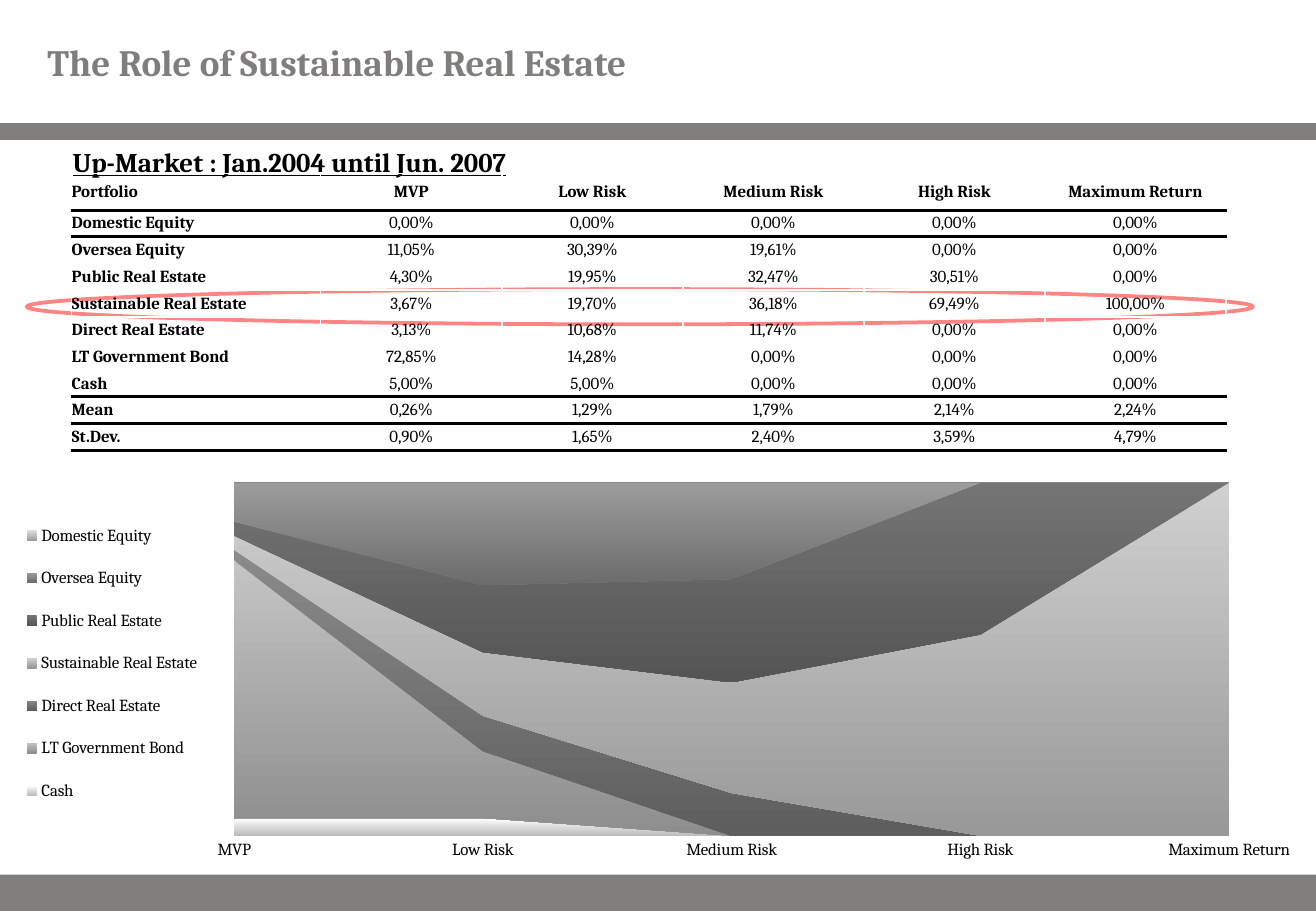
from dataclasses import dataclass

from pptx import Presentation
from pptx.chart.data import CategoryChartData
from pptx.dml.color import RGBColor
from pptx.enum.chart import XL_CHART_TYPE as CT, XL_LEGEND_POSITION as LP, XL_TICK_MARK as TM
from pptx.enum.shapes import MSO_CONNECTOR as CONN, MSO_SHAPE as SHAPE
from pptx.enum.text import MSO_ANCHOR as ANCHOR, PP_ALIGN as ALIGN
from pptx.oxml import parse_xml
from pptx.oxml.ns import nsdecls, qn
from pptx.util import Inches, Pt


@dataclass(frozen=True)
class Theme:
    font: str = "Cambria"
    title: int = 22
    heading: int = 16
    body: int = 10
    ink: str = "000000"
    gray: str = "7F7E7D"
    mark: str = "FF0000"


LEVELS = ["MVP", "Low Risk", "Medium Risk", "High Risk", "Maximum Return"]
TABLE = [
    ["Portfolio", *LEVELS],
    ["Domestic Equity", "0,00%", "0,00%", "0,00%", "0,00%", "0,00%"],
    ["Oversea Equity", "11,05%", "30,39%", "19,61%", "0,00%", "0,00%"],
    ["Public Real Estate", "4,30%", "19,95%", "32,47%", "30,51%", "0,00%"],
    ["Sustainable Real Estate", "3,67%", "19,70%", "36,18%", "69,49%", "100,00%"],
    ["Direct Real Estate", "3,13%", "10,68%", "11,74%", "0,00%", "0,00%"],
    ["LT Government Bond", "72,85%", "14,28%", "0,00%", "0,00%", "0,00%"],
    ["Cash", "5,00%", "5,00%", "0,00%", "0,00%", "0,00%"],
    ["Mean", "0,26%", "1,29%", "1,79%", "2,14%", "2,24%"],
    ["St.Dev.", "0,90%", "1,65%", "2,40%", "3,59%", "4,79%"],
]
RULED_ROWS = (0, 7, 9)  # rows with a rule below them
# name, values, gradient from top to bottom
SERIES = [
    ("Cash", (5, 5, 0, 0, 0), ("FFFFFF", "BBBBBB")),
    ("LT Government Bond", (73, 19, 0, 0, 0), ("C4C4C4", "8E8E8E")),
    ("Direct Real Estate", (3, 10, 12, 0, 0), ("8A8A8A", "5E5E5E")),
    ("Sustainable Real Estate", (4, 18, 31, 57, 100), ("D0D0D0", "999999")),
    ("Public Real Estate", (4, 19, 29, 43, 0), ("747474", "555555")),
    ("Oversea Equity", (11, 29, 27, 0, 0), ("9C9C9C", "6C6C6C")),
    ("Domestic Equity", (0, 0, 0, 0, 0), ("E0E0E0", "A0A0A0")),
]


def rgb(value):
    return RGBColor.from_string(value)


def add_text(tf, text, *, font, size, color, bold=False, underline=False, align=ALIGN.LEFT):
    p = tf.paragraphs[0]
    p.alignment = align
    r = p.add_run()
    r.text = text
    r.font.name, r.font.size = font, Pt(size)
    r.font.bold, r.font.underline = bold, underline
    r.font.color.rgb = rgb(color)


def set_layout(parent, index, x, y, w, h, inner=False):
    """Place a chart part at fractions of the chart area."""
    for old in parent.findall(qn("c:layout")):
        parent.remove(old)
    target = '<c:layoutTarget val="inner"/>' if inner else ""
    parent.insert(index, parse_xml(
        f'<c:layout {nsdecls("c")}><c:manualLayout>{target}'
        '<c:xMode val="edge"/><c:yMode val="edge"/>'
        f'<c:x val="{x}"/><c:y val="{y}"/><c:w val="{w}"/><c:h val="{h}"/>'
        '</c:manualLayout></c:layout>'))


class SlideBuilder:
    def __init__(self, slide, theme):
        self.s, self.theme = slide, theme

    def text(self, tf, text, **fmt):
        base = dict(font=self.theme.font, size=self.theme.body, color=self.theme.ink)
        add_text(tf, text, **{**base, **fmt})

    def title(self, text, box):
        sp = self.s.shapes.title
        sp.left, sp.top, sp.width, sp.height = map(Inches, box)
        tf = sp.text_frame
        tf.vertical_anchor = ANCHOR.MIDDLE
        tf.margin_left = tf.margin_right = Inches(0.39)
        tf.margin_top = tf.margin_bottom = 0
        self.text(tf, text, size=self.theme.title, color=self.theme.gray, bold=True)

    def heading(self, text, box):
        tf = self.s.shapes.add_textbox(*map(Inches, box)).text_frame
        tf.word_wrap = True
        self.text(tf, text, size=self.theme.heading, bold=True, underline=True)

    def rule(self, y, width, weight):
        ln = self.s.shapes.add_connector(CONN.STRAIGHT, 0, Inches(y), Inches(width), Inches(y))
        ln.line.color.rgb, ln.line.width = rgb(self.theme.gray), Pt(weight)
        ln._element.spPr.append(parse_xml(f'<a:effectLst {nsdecls("a")}/>'))

    def bar(self, box):
        sp = self.s.shapes.add_shape(SHAPE.RECTANGLE, *map(Inches, box))
        sp.shadow.inherit = False
        sp.fill.solid()
        sp.fill.fore_color.rgb = rgb(self.theme.gray)
        sp.line.fill.background()

    def ring(self, box, alpha):
        sp = self.s.shapes.add_shape(SHAPE.OVAL, *map(Inches, box))
        sp.shadow.inherit = False
        sp.fill.background()
        sp.line.color.rgb, sp.line.width = rgb(self.theme.mark), Pt(2.25)
        color = sp.line._ln.find(".//" + qn("a:srgbClr"))
        color.append(parse_xml(f'<a:alpha {nsdecls("a")} val="{alpha * 1000}"/>'))

    def border(self, cell, side):
        cell._tc.get_or_add_tcPr().append(parse_xml(
            f'<a:{side} {nsdecls("a")} w="{Pt(2)}"><a:solidFill>'
            f'<a:srgbClr val="{self.theme.ink}"/></a:solidFill></a:{side}>'))

    def table(self, rows, box, col_widths, row_heights):
        frame = self.s.shapes.add_table(len(rows), len(rows[0]), *map(Inches, box))
        tb = frame.table
        tb.first_row = tb.horz_banding = False
        for col, w in zip(tb.columns, col_widths):
            col.width = Inches(w)
        for row, h in zip(tb.rows, row_heights):
            row.height = Inches(h)
        for i, row in enumerate(rows):
            for j, text in enumerate(row):
                cell = tb.cell(i, j)
                cell.margin_left = cell.margin_right = 0
                cell.margin_top = cell.margin_bottom = 0
                cell.vertical_anchor = ANCHOR.MIDDLE
                if i - 1 in RULED_ROWS:
                    self.border(cell, "lnT")
                if i in RULED_ROWS:
                    self.border(cell, "lnB")
                cell.fill.background()
                self.text(cell.text_frame, text, bold=i == 0 or j == 0,
                          align=ALIGN.CENTER if j else ALIGN.LEFT)

    def area_chart(self, categories, series, box):
        data = CategoryChartData(number_format="0")
        data.categories = categories
        for name, values, _ in series:
            data.add_series(name, values)
        chart = self.s.shapes.add_chart(CT.AREA_STACKED_100, *map(Inches, box), data).chart
        chart.has_title = False
        chart.font.name, chart.font.size = self.theme.font, Pt(self.theme.body)
        chart.font.color.rgb = rgb(self.theme.ink)

        # Series gradients
        for ser, (_, _, shades) in zip(chart.plots[0].series, series):
            fill = ser.format.fill
            fill.gradient()
            fill.gradient_angle = 270
            for stop, shade in zip(fill.gradient_stops, shades):
                stop.color.rgb = rgb(shade)

        # Axes: the areas reach both ends of the category axis
        chart.category_axis.major_tick_mark = TM.NONE
        val = chart.value_axis
        val.visible = False
        val.has_major_gridlines = True
        val.tick_labels.number_format = "0.00%"
        val.tick_labels.number_format_is_linked = False
        val._element.find(qn("c:crossBetween")).set("val", "midCat")

        # Legend and plot placement
        chart.has_legend = True
        chart.legend.position = LP.LEFT
        chart.legend.include_in_layout = False
        set_layout(chart.legend._element, 1, 0.01, 0.07, 0.15, 0.82)
        plot_area = chart._chartSpace.chart.plotArea
        set_layout(plot_area, 0, 0.178, 0.02, 0.756, 0.9, inner=True)


def main():
    prs = Presentation()
    prs.slide_width, prs.slide_height = Inches(10.83), Inches(7.5)
    b = SlideBuilder(prs.slides.add_slide(prs.slide_layouts[5]), Theme())

    # Frame and title
    b.rule(1.08, 10.83, 10)
    b.bar((0, 7.2, 10.83, 0.3))
    b.title("The Role of Sustainable Real Estate", (0, 0, 10.83, 1.01))

    # Portfolio table with the highlighted row
    b.ring((0.22, 2.38, 10.09, 0.29), alpha=47)
    b.heading("Up-Market : Jan.2004 until Jun. 2007", (0.5, 1.15, 7.46, 0.37))
    b.table(TABLE, (0.59, 1.43, 9.5, 2.28), [2.05] + [1.49] * 5, [0.3] + [0.22] * 9)

    # Allocation by risk level
    b.area_chart(LEVELS, SERIES, (0, 3.91, 10.83, 3.23))
    prs.save("out.pptx")


if __name__ == "__main__":
    main()
